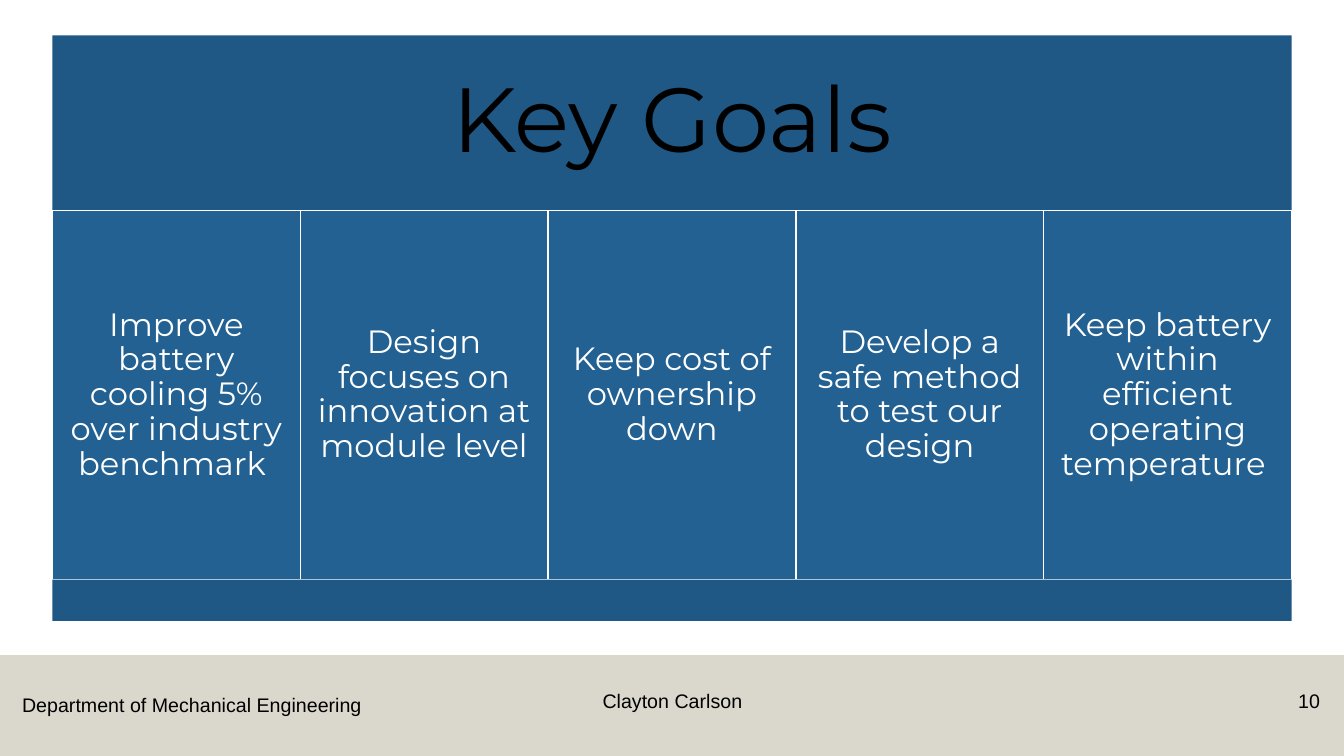
import pptx
import pptx.util
import pptx.dml.color
import pptx.enum.shapes
import pptx.enum.text
import pptx.oxml.ns
import lxml.etree

Inches = pptx.util.Inches
Align = pptx.enum.text.PP_ALIGN
Anchor = pptx.enum.text.MSO_ANCHOR

TITLE = "Key Goals"
GOALS = [
    "Improve battery cooling 5% over industry benchmark ",
    "Design focuses on innovation at module level",
    "Keep cost of ownership down",
    "Develop a safe method to test our design",
    "Keep battery within efficient operating temperature ",
]
FOOTER = [  # text, left, top, width, height, align, wrap
    ("Department of Mechanical Engineering", 0.12, 6.83, 3.59, 0.34, Align.LEFT, False),
    ("Clayton Carlson", 4.42, 6.79, 4.5, 0.4, Align.CENTER, True),
    ("10", 12.42, 6.79, 0.77, 0.4, Align.RIGHT, True),
]

THEME = {
    "band": "205885", "card": "236192", "foot": "B7B09C",
    "dark": "000000", "light": "FFFFFF",
    "head": "Montserrat", "body": "Arial",
    "title_size": 65, "goal_size": 23, "foot_size": 14,
}

WIDE, HIGH = 13.33, 7.5
LEFT, TOP, SPAN = 0.52, 0.35, 12.29
HEAD, CARD, BASE, FOOT = 1.74, 3.66, 0.41, 1


def tint(name):
    return pptx.dml.color.RGBColor.from_string(THEME[name])


def paint(shape, fill, line=None):
    shape.fill.solid()
    shape.fill.fore_color.rgb = tint(fill)
    if line:
        shape.line.color.rgb = tint(line)
        shape.line.width = pptx.util.Pt(1)
    else:
        shape.line.fill.background()


def block(slide, box, fill, line=None):
    shape = slide.shapes.add_shape(
        pptx.enum.shapes.MSO_SHAPE.RECTANGLE, *map(Inches, box))
    shape.shadow.inherit = False
    paint(shape, fill, line)
    return shape


def write(shape, text, face, size, color, align, **frame):
    """Set one paragraph; frame holds text frame attributes."""
    body = shape.text_frame
    body.text = text
    for name, value in frame.items():
        setattr(body, name, value)
    para = body.paragraphs[0]
    para.alignment = align
    font = para.runs[0].font
    for name, value in {"name": THEME[face], "size": pptx.util.Pt(THEME[size])}.items():
        setattr(font, name, value)
    font.color.rgb = tint(color)
    return para


def panel(shape, text, size, color, inset):
    """Write centred text with equal insets on all sides."""
    edges = {f"margin_{side}": Inches(inset)
             for side in ("left", "top", "right", "bottom")}
    para = write(shape, text, "head", size, color, Align.CENTER,
                 word_wrap=True, auto_size=pptx.enum.text.MSO_AUTO_SIZE.NONE,
                 vertical_anchor=Anchor.MIDDLE, **edges)
    para.line_spacing = 0.9


def fade(shape, share):
    """Make a solid fill see-through; share is the opacity in percent."""
    qn = pptx.oxml.ns.qn
    color = shape.fill._xPr.find(qn("a:solidFill"))[0]
    lxml.etree.SubElement(color, qn("a:alpha")).set("val", str(share * 1000))


def main():
    deck = pptx.Presentation()
    deck.slide_width, deck.slide_height = Inches(WIDE), Inches(HIGH)
    slide = deck.slides.add_slide(deck.slide_layouts[5])

    fade(block(slide, (0, HIGH - FOOT, WIDE, FOOT), "foot"), 50)
    for text, left, top, width, height, align, wrap in FOOTER:
        label = slide.shapes.add_textbox(*map(Inches, (left, top, width, height)))
        write(label, text, "body", "foot_size", "dark", align, word_wrap=wrap)

    title = slide.shapes.title
    place = dict(left=LEFT, top=TOP, width=SPAN, height=HEAD)
    for name, value in place.items():
        setattr(title, name, Inches(value))
    paint(title, "band")
    panel(title, TITLE, "title_size", "dark", 0.27)

    step = SPAN / len(GOALS)
    for i, goal in enumerate(GOALS):
        card = block(slide, (LEFT + i * step, TOP + HEAD, step, CARD), "card", "light")
        panel(card, goal, "goal_size", "light", 0.1)

    block(slide, (LEFT, TOP + HEAD + CARD, SPAN, BASE), "band")
    deck.save("out.pptx")


if __name__ == "__main__":
    main()
